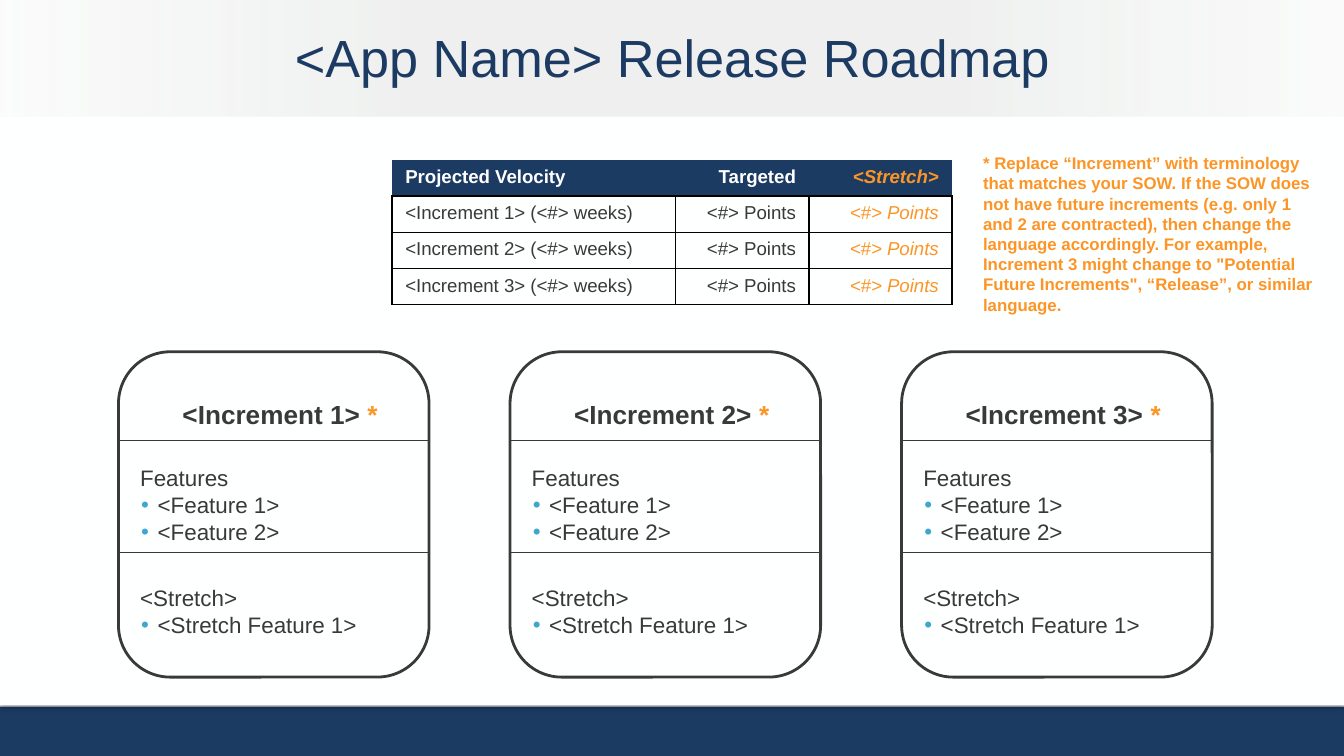
from dataclasses import dataclass
from typing import Optional

from pptx import Presentation
from pptx import util as u
from pptx.dml.color import RGBColor
from pptx.enum import shapes, text
from pptx.oxml import parse_xml
from pptx.oxml.ns import nsdecls

COLORS = {
    "navy": "1C3B63", "paper": "FEFFFF", "white": "FFFFFF", "black": "000000",
    "ink": "393939", "orange": "FD9526", "bullet": "3FA7CE", "silver": "C4C5C4",
}
FONT = "Arial"
LEFT, CENTER, RIGHT = text.PP_ALIGN.LEFT, text.PP_ALIGN.CENTER, text.PP_ALIGN.RIGHT
RECT = shapes.MSO_SHAPE.RECTANGLE
CARD = shapes.MSO_SHAPE.FLOWCHART_ALTERNATE_PROCESS


@dataclass
class Box:
    x: float
    y: float
    w: float
    h: float

    def lengths(self) -> list:
        return [u.Cm(v) for v in (self.x, self.y, self.w, self.h)]


@dataclass
class Run:
    words: str
    size: float
    color: str = "ink"
    bold: bool = False
    italic: bool = False


@dataclass
class Para:
    runs: list[Run]
    align: text.PP_ALIGN = LEFT
    bullet: bool = False


def rgb(name: str) -> RGBColor:
    return RGBColor.from_string(COLORS[name])


def xml(tag: str, attrs: str = "", inner: str = ""):
    return parse_xml(f"<a:{tag} {nsdecls('a')} {attrs}>{inner}</a:{tag}>")


def solid(name: str, alpha: int = 100) -> str:
    return f'<a:srgbClr val="{COLORS[name]}"><a:alpha val="{alpha * 1000}"/></a:srgbClr>'


def write(tf, paras: list[Para]) -> None:
    for i, para in enumerate(paras):
        p = tf.add_paragraph() if i else tf.paragraphs[0]
        p.alignment = para.align
        if para.bullet:
            pPr = p._p.get_or_add_pPr()
            pPr.set("marL", str(u.Cm(0.33)))
            pPr.set("indent", str(-u.Cm(0.31)))
            pPr.append(xml("buClr", inner=solid("bullet")))
            pPr.append(xml("buFont", f'typeface="{FONT}"'))
            pPr.append(xml("buChar", 'char="•"'))
        for run in para.runs:
            r = p.add_run()
            r.text = run.words
            r.font.name, r.font.size = FONT, u.Pt(run.size)
            r.font.bold, r.font.italic = run.bold, run.italic
            r.font.color.rgb = rgb(run.color)


def add_text(s, box: Box, paras: list[Para], inset: float = 0.25,
             anchor: text.MSO_ANCHOR = text.MSO_ANCHOR.TOP) -> None:
    tf = s.shapes.add_textbox(*box.lengths()).text_frame
    tf.word_wrap = True
    tf.vertical_anchor = anchor
    tf.margin_left = tf.margin_right = u.Cm(0.25)
    tf.margin_top = tf.margin_bottom = u.Cm(inset)
    write(tf, paras)


def add_shape(s, kind: shapes.MSO_SHAPE, box: Box, fill: Optional[str] = None,
              line: Optional[str] = None, width: float = 0.75):
    sp = s.shapes.add_shape(kind, *box.lengths())
    sp.shadow.inherit = False
    if fill:
        sp.fill.solid()
        sp.fill.fore_color.rgb = rgb(fill)
    else:
        sp.fill.background()
    if line:
        sp.line.color.rgb = rgb(line)
        sp.line.width = u.Pt(width)
    else:
        sp.line.fill.background()
    return sp


def add_rule(s, x: float, y: float, w: float) -> None:
    ln = s.shapes.add_connector(shapes.MSO_CONNECTOR.STRAIGHT,
                                u.Cm(x), u.Cm(y), u.Cm(x + w), u.Cm(y))
    ln.line.color.rgb = rgb("ink")
    ln.line.width = u.Pt(0.75)
    ln._element.spPr.append(xml("effectLst"))


def add_background(s) -> None:
    s.background.fill.solid()
    s.background.fill.fore_color.rgb = rgb("paper")
    add_shape(s, RECT, Box(0, 13.36, 25.4, 0.93), "navy")
    # White panel casting a soft shadow on the footer
    panel = add_shape(s, RECT, Box(0, 0, 25.4, 13.31), "paper", "paper")
    effects = panel._element.spPr.find(xml("effectLst").tag)
    effects.append(xml("outerShdw", f'blurRad="{u.Pt(3.1)}" dist="{u.Pt(1.8)}" '
                       'dir="5400000" rotWithShape="0"', solid("black", 35)))
    # Translucent header band
    band = add_shape(s, RECT, Box(0, 0, 25.4, 2.21))
    band.fill.gradient()
    band.fill.gradient_angle = 180
    stops = band._element.spPr.find(".//" + xml("gsLst").tag)
    for stop in list(stops):
        stops.remove(stop)
    for pos, alpha in ((0, 6), (29, 25), (69, 25), (100, 5)):
        stops.append(xml("gs", f'pos="{pos * 1000}"', solid("silver", alpha)))


def set_borders(cell, header: bool) -> None:
    tcPr = cell._tc.get_or_add_tcPr()
    for i, side in enumerate("LRTB"):
        hidden = header and side != "B"
        paint = "<a:noFill/>" if hidden else f"<a:solidFill>{solid('black')}</a:solidFill>"
        tcPr.insert(i, xml(f"ln{side}", f'w="{u.Pt(0.75)}"', paint))


def add_velocity_table(s) -> None:
    rows = [("Projected Velocity", "Targeted", "<Stretch>")]
    rows += [(f"<Increment {n}> (<#> weeks)", "<#> Points", "<#> Points") for n in (1, 2, 3)]
    table = s.shapes.add_table(4, 3, *Box(7.41, 3.02, 10.58, 2.62).lengths()).table
    table.horz_banding = False
    for col, width in zip(table.columns, (5.36, 2.52, 2.7)):
        col.width = u.Cm(width)
    for r, words in enumerate(rows):
        header = r == 0
        table.rows[r].height = u.Cm(0.64 if header else 0.66)
        for c, word in enumerate(words):
            cell = table.cell(r, c)
            cell.margin_left = cell.margin_right = u.Cm(0.25)
            cell.margin_top = cell.margin_bottom = u.Cm(0.13)
            if header:
                cell.fill.solid()
                cell.fill.fore_color.rgb = rgb("navy")
            else:
                cell.fill.background()
            set_borders(cell, header)
            color = "orange" if c == 2 else "white" if header else "ink"
            write(cell.text_frame, [Para([Run(word, 10, color, header, c == 2)],
                                         RIGHT if c else LEFT)])


def add_increment_card(s, n: int, x: float) -> None:
    def listing(y: float, h: float, heading: str, items: list[str]) -> None:
        paras = [Para([Run(heading, 12)])]
        paras += [Para([Run(item, 12)], bullet=True) for item in items]
        add_text(s, Box(x + 0.16, y, 5.6, h), paras)

    add_shape(s, CARD, Box(x, 6.65, 5.87, 6.15), line="ink", width=1.5)
    add_text(s, Box(x + 0.96, 7.29, 4.27, 0.64),
             [Para([Run(f"<Increment {n}> ", 14, bold=True), Run("*", 14, "orange", True)])])
    listing(8.53, 1.78, "Features", ["<Feature 1>", "<Feature 2>"])
    listing(10.8, 1.24, "<Stretch>", ["<Stretch Feature 1>"])
    for y in (8.33, 10.45):
        add_rule(s, x, y, 5.87)


def main() -> None:
    prs = Presentation()
    prs.slide_width, prs.slide_height = u.Cm(25.4), u.Cm(14.29)
    s = prs.slides.add_slide(prs.slide_layouts[6])
    add_background(s)
    # Title
    add_text(s, Box(0, 0.41, 25.4, 1.32),
             [Para([Run("<App Name> Release Roadmap", 28, "navy")], CENTER)],
             0.13, text.MSO_ANCHOR.MIDDLE)
    add_velocity_table(s)
    # Guidance note
    note = ("* Replace “Increment” with terminology that matches your SOW. If the SOW does "
            "not have future increments (e.g. only 1 and 2 are contracted), then change the "
            "language accordingly. For example, Increment 3 might change to \"Potential "
            "Future Increments\", “Release”, or similar language.")
    add_text(s, Box(18.33, 2.64, 6.88, 3.73), [Para([Run(note, 9, "orange", True)])])
    # Increment cards
    for i in range(3):
        add_increment_card(s, i + 1, 2.24 + 7.4 * i)
    prs.save("out.pptx")


if __name__ == "__main__":
    main()
